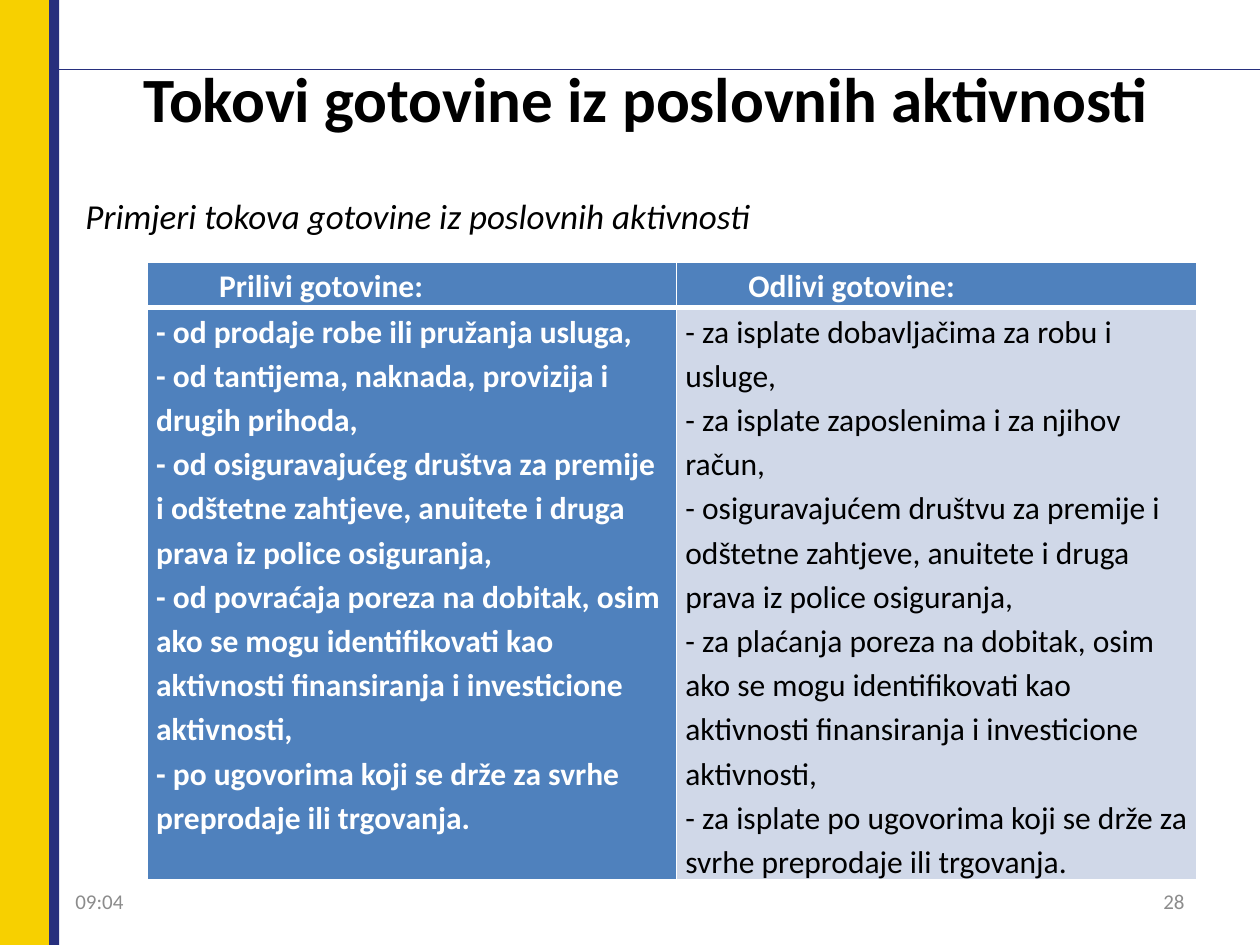
from dataclasses import dataclass

from lxml.etree import SubElement
from pptx import Presentation
from pptx.dml.color import RGBColor
from pptx.enum.shapes import MSO_CONNECTOR, MSO_SHAPE
from pptx.enum.text import MSO_ANCHOR, PP_ALIGN
from pptx.oxml import parse_xml
from pptx.oxml.ns import nsdecls, qn
from pptx.util import Inches, Pt


@dataclass(frozen=True)
class Theme:
    font: str = "Calibri"
    yellow: str = "F7D000"
    navy: str = "272F7D"
    blue: str = "4F81BD"
    pale: str = "D0D8E8"
    white: str = "FFFFFF"
    black: str = "000000"
    grey: str = "8C8C8C"
    title_size: int = 36
    subtitle_size: int = 20
    table_size: int = 18
    footer_size: int = 12


THEME = Theme()

HEADERS = ["Prilivi gotovine:", "Odlivi gotovine:"]
INFLOWS = [
    "- od prodaje robe ili pružanja usluga,",
    "- od tantijema, naknada, provizija i drugih prihoda,",
    "- od osiguravajućeg društva za premije i odštetne zahtjeve, anuitete i druga prava iz police osiguranja,",
    "- od povraćaja poreza na dobitak, osim ako se mogu identifikovati kao aktivnosti finansiranja i investicione aktivnosti,",
    "- po ugovorima koji se drže za svrhe preprodaje ili trgovanja.",
]
OUTFLOWS = [
    "- za isplate dobavljačima za robu i usluge,",
    "- za isplate zaposlenima i za njihov račun,",
    "- osiguravajućem društvu za premije i odštetne zahtjeve, anuitete i druga prava iz police osiguranja,",
    "- za plaćanja poreza na dobitak, osim ako se mogu identifikovati kao aktivnosti finansiranja i investicione aktivnosti,",
    "- za isplate po ugovorima koji se drže za svrhe preprodaje ili trgovanja.",
]


def style_paragraph(paragraph, size, color, bold=False, italic=False):
    font = paragraph.font
    font.name, font.size = THEME.font, Pt(size)
    font.bold, font.italic = bold, italic
    font.color.rgb = RGBColor.from_string(color)


def add_text(slide, box, text, size, color, align=PP_ALIGN.LEFT, wrap=True, **style):
    shape = slide.shapes.add_textbox(*map(Inches, box))
    frame = shape.text_frame
    frame.word_wrap = wrap
    frame.vertical_anchor = MSO_ANCHOR.MIDDLE
    paragraph = frame.paragraphs[0]
    paragraph.text = text
    paragraph.alignment = align
    style_paragraph(paragraph, size, color, **style)


def add_frame(slide, box):
    """Two vertical bars at the left edge and a rule across the top."""
    left, top, width, height = box
    bar_edge = left + 0.39
    for x, bar_width, color in [(left, 0.39, THEME.yellow), (bar_edge, 0.08, THEME.navy)]:
        bar = slide.shapes.add_shape(
            MSO_SHAPE.RECTANGLE, Inches(x), Inches(top), Inches(bar_width), Inches(height))
        bar.shadow.inherit = False
        bar.fill.solid()
        bar.fill.fore_color.rgb = RGBColor.from_string(color)
        bar.line.fill.background()

    y = Inches(top + 0.55)
    rule = slide.shapes.add_connector(
        MSO_CONNECTOR.STRAIGHT, Inches(bar_edge), y, Inches(left + width), y)
    rule.line.color.rgb = RGBColor.from_string(THEME.navy)
    rule.line.width = Pt(0.75)
    SubElement(rule._element.spPr, qn("a:effectLst"))


def set_borders(cell, **widths):
    """Draw white cell borders; widths are points for L, R, T and B."""
    properties = cell._tc.get_or_add_tcPr()
    for index, (side, width) in enumerate(widths.items()):
        properties.insert(index, parse_xml(
            f'<a:ln{side} {nsdecls("a")} w="{Pt(width)}"><a:solidFill>'
            f'<a:srgbClr val="{THEME.white}"/></a:solidFill></a:ln{side}>'))


def fill_cell(cell, lines, fill, color, bold, header=False):
    cell.margin_left = cell.margin_right = Inches(0.07)
    cell.margin_top = cell.margin_bottom = 0
    cell.fill.solid()
    cell.fill.fore_color.rgb = RGBColor.from_string(fill)
    cell.text = "\n".join(lines)
    for paragraph in cell.text_frame.paragraphs:
        paragraph.line_spacing = 1.15
        style_paragraph(paragraph, THEME.table_size, color, bold=bold)
        if header:
            paragraph.alignment = PP_ALIGN.JUSTIFY
            paragraph._p.get_or_add_pPr().set("marL", str(Inches(0.5)))
    # The thick line separates the header from the body
    set_borders(cell, L=1, R=1, T=1 if header else 3, B=3 if header else 1)


def add_flow_table(slide, box):
    table = slide.shapes.add_table(2, 2, *map(Inches, box)).table
    header_height = 0.36
    table.columns[0].width = Inches(4.2)
    table.columns[1].width = Inches(box[2] - 4.2)
    table.rows[0].height = Inches(header_height)
    table.rows[1].height = Inches(box[3] - header_height)
    for column, header in enumerate(HEADERS):
        fill_cell(table.cell(0, column), [header], THEME.blue, THEME.white, True, header=True)
    fill_cell(table.cell(1, 0), INFLOWS, THEME.blue, THEME.white, True)
    fill_cell(table.cell(1, 1), OUTFLOWS, THEME.pale, THEME.black, False)


def add_footer(slide, box):
    """Time at the left end, slide number at the right end."""
    left, top, width, height = box
    field = 2.33
    for x, text, align in [(left, "09:04", PP_ALIGN.LEFT),
                           (left + width - field, "28", PP_ALIGN.RIGHT)]:
        add_text(slide, (x, top, field, height), text, THEME.footer_size, THEME.grey, align)


def main():
    presentation = Presentation()
    presentation.slide_width, presentation.slide_height = Inches(10), Inches(7.5)
    slide = presentation.slides.add_slide(presentation.slide_layouts[6])

    add_frame(slide, (0, 0, 10, 7.5))
    add_text(slide, (0.5, 0.55, 9.25, 0.45), "Tokovi gotovine iz poslovnih aktivnosti",
             THEME.title_size, THEME.black, PP_ALIGN.CENTER, bold=True)
    add_flow_table(slide, (1.17, 2.08, 8.33, 4.9))
    add_text(slide, (0.58, 1.46, 5.52, 0.5), "Primjeri tokova gotovine iz poslovnih aktivnosti",
             THEME.subtitle_size, THEME.black, wrap=False, italic=True)
    add_footer(slide, (0.5, 6.95, 9, 0.4))

    presentation.save("out.pptx")


if __name__ == "__main__":
    main()
